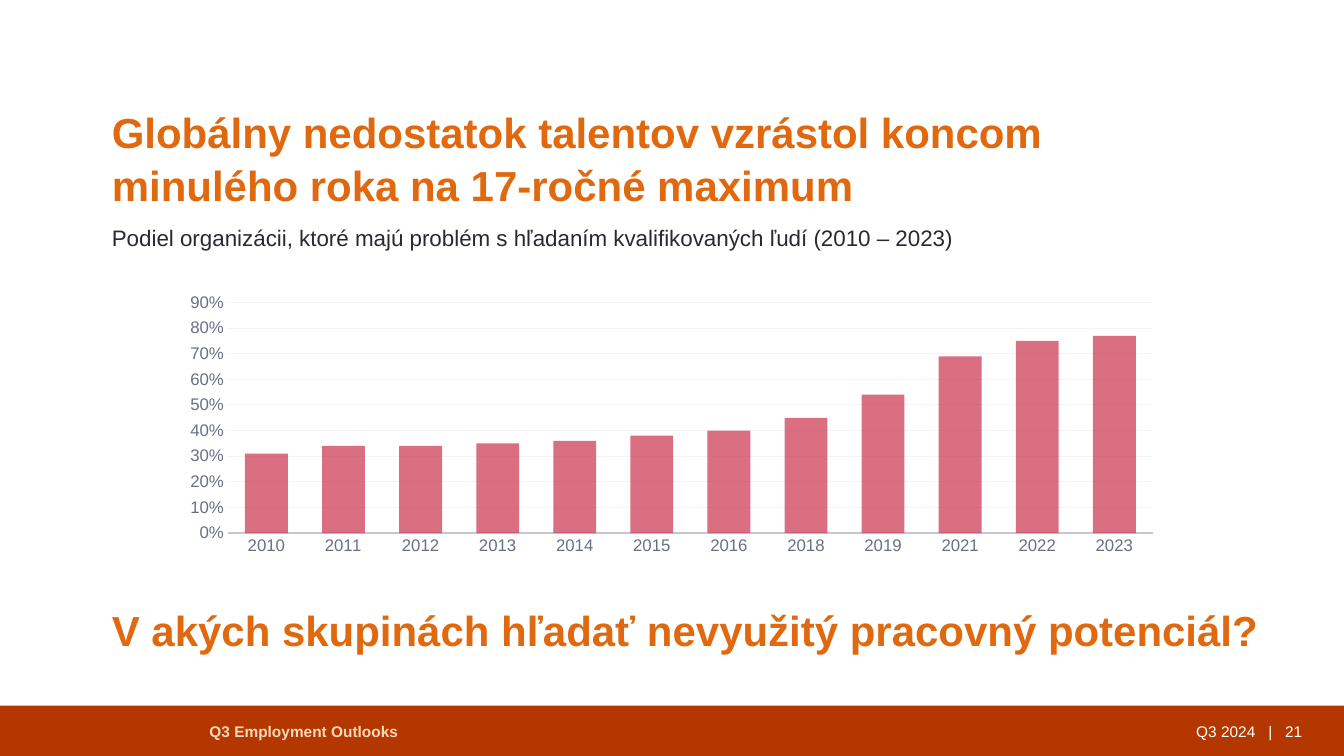
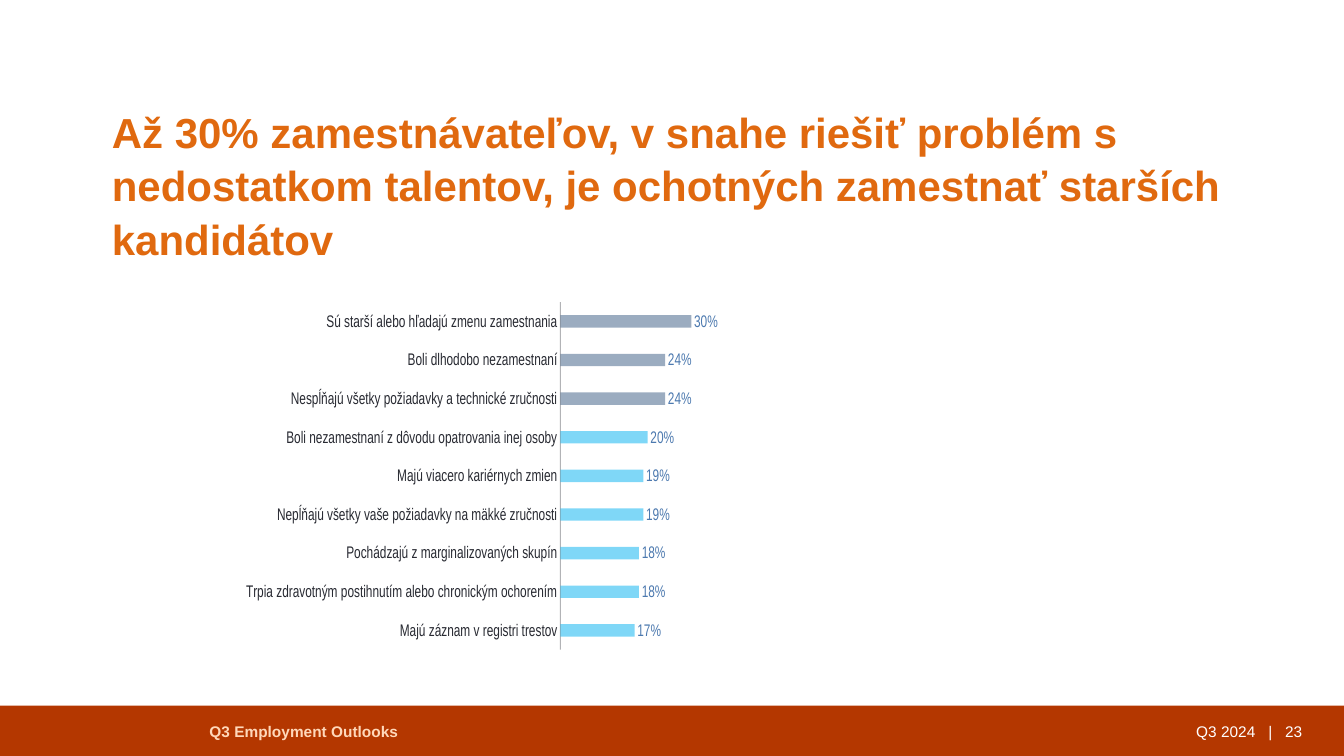
from pptx import Presentation
from pptx.chart.data import CategoryChartData as Data
from pptx.dml.color import RGBColor as RGB
from pptx.enum.chart import XL_CHART_TYPE as Kind
from pptx.enum.chart import XL_LABEL_POSITION as Spot
from pptx.enum.chart import XL_TICK_MARK as Tick
from pptx.enum.shapes import MSO_SHAPE as Form
from pptx.enum.text import MSO_ANCHOR as Anchor
from pptx.enum.text import PP_ALIGN as Align
from pptx.oxml import parse_xml
from pptx.oxml.ns import nsdecls, qn
from pptx.util import Cm, Pt

FACE = "Arial"
ORANGE, RUST, PEACH, WHITE = "E0690F", "B43700", "FFD8BA", "FFFFFF"
INK, GREY, PALE, RULE, STONE = "282A32", "696F84", "F3F4F6", "C5C7D0", "67696F"
ROSE, SKY, NAVY, BLUE = "CC334D", "00B0F0", "395B83", "4C79AF"
LEFT, WIDE = 2.82, 28.19
HEAD = dict(size=30, color=ORANGE, bold=True, lead=38)


def paint(fill, color, alpha=None):
    fill.solid()
    fill.fore_color.rgb = RGB.from_string(color)
    if alpha:
        tone = fill._xPr.find(qn("a:solidFill")).find(qn("a:srgbClr"))
        tone.append(parse_xml(f'<a:alpha {nsdecls("a")} val="{alpha * 1000}"/>'))


def text(slide, words, box, size=11, color=INK, bold=False, lead=None,
         align=Align.LEFT, anchor=Anchor.TOP, gap=0):
    """Words is a list of runs; a run of one space is widened by gap points."""
    frame = slide.shapes.add_textbox(*map(Cm, box)).text_frame
    frame.word_wrap = True
    frame.vertical_anchor = anchor
    frame.margin_left = frame.margin_right = 0
    frame.margin_top = frame.margin_bottom = 0
    para = frame.paragraphs[0]
    para.alignment = align
    if lead:
        para.line_spacing = Pt(lead)
    for part in words:
        run = para.add_run()
        run.text = part
        run.font.name, run.font.size, run.font.bold = FACE, Pt(size), bold
        paint(run.font.fill, color)
        if part == " ":
            run.font._element.set("spc", str(round(gap * 100)))


pages = [
    dict(
        num="21",
        title="Globálny nedostatok talentov vzrástol koncom "
              "minulého roka na 17-ročné maximum",
        kind=Kind.COLUMN_CLUSTERED, box=(4.29, 7.26, 25.27, 6.86),
        bar=(ROSE, 70), space=80, label=GREY, axis=(RULE, None, 1.25),
        rows=[("2010", 0.31), ("2011", 0.34), ("2012", 0.34), ("2013", 0.35),
              ("2014", 0.36), ("2015", 0.38), ("2016", 0.4), ("2018", 0.45),
              ("2019", 0.54), ("2021", 0.69), ("2022", 0.75), ("2023", 0.77)]),
    dict(
        num="23",
        title="Až 30% zamestnávateľov, v snahe riešiť problém s nedostatkom "
              "talentov, je ochotných zamestnať starších kandidátov",
        kind=Kind.BAR_CLUSTERED, box=(6.2, 5.64, 27.05, 12.34),
        bar=(SKY, 50), space=214, label=INK, axis=(STONE, 50, 1),
        rows=[("Sú starší alebo hľadajú zmenu zamestnania", 0.3),
              ("Boli dlhodobo nezamestnaní", 0.24),
              ("Nespĺňajú všetky požiadavky a technické zručnosti", 0.24),
              ("Boli nezamestnaní z dôvodu opatrovania inej osoby", 0.2),
              ("Majú viacero kariérnych zmien", 0.19),
              ("Nepĺňajú všetky vaše požiadavky na mäkké zručnosti", 0.19),
              ("Pochádzajú z marginalizovaných skupín", 0.18),
              ("Trpia zdravotným postihnutím alebo chronickým ochorením", 0.18),
              ("Majú záznam v registri trestov", 0.17)]),
]

deck = Presentation()
deck.slide_width, deck.slide_height = Cm(33.87), Cm(19.05)
slides, charts = [], []

for page in pages:
    slide = deck.slides.add_slide(deck.slide_layouts[6])
    slides.append(slide)

    # Footer band
    band = slide.shapes.add_shape(Form.RECTANGLE, 0, Cm(17.78),
                                  deck.slide_width, Cm(1.27))
    band.shadow.inherit = False
    paint(band.fill, RUST)
    band.line.fill.background()
    text(slide, ["Q3 Employment Outlooks"], (5.28, 18.19, 10.16, 0.48),
         color=PEACH, bold=True, anchor=Anchor.MIDDLE)
    text(slide, ["Q3 2024", " ", "|", " ", page["num"]],
         (27.38, 18.19, 5.44, 0.48), color=WHITE, align=Align.RIGHT,
         anchor=Anchor.MIDDLE, gap=6.1)

    # Title
    text(slide, [page["title"]], (LEFT, 2.62, WIDE, 1.27), **HEAD)

    # Chart with its shared style
    data = Data(number_format="0%")
    data.categories = [name for name, _ in page["rows"]]
    data.add_series("Series 1", [value for _, value in page["rows"]])
    chart = slide.shapes.add_chart(page["kind"], *map(Cm, page["box"]),
                                   data).chart
    charts.append(chart)
    chart.has_legend = chart.has_title = False
    chart.font.name, chart.font.size = FACE, Pt(10)
    paint(chart.font.fill, INK)
    plot = chart.plots[0]
    plot.gap_width, plot.vary_by_categories = page["space"], False
    bars = plot.series[0]
    bars.invert_if_negative = False
    paint(bars.format.fill, *page["bar"])
    for axis in (chart.category_axis, chart.value_axis):
        axis.major_tick_mark = axis.minor_tick_mark = Tick.NONE
        axis.has_major_gridlines = False
        font = axis.tick_labels.font
        font.name, font.size = FACE, Pt(12)
        paint(font.fill, page["label"])
    chart.value_axis.minimum_scale = 0
    color, alpha, width = page["axis"]
    line = chart.category_axis.format.line
    line.width = Pt(width)
    paint(line.fill, color, alpha)

# Columns: value axis and gridlines
years, groups = charts
years.plots[0].overlap = 25
axis = years.value_axis
axis.maximum_scale, axis.major_unit = 0.9, 0.1
axis.tick_labels.number_format = "0%"
axis.tick_labels.number_format_is_linked = False
axis.format.line.fill.background()
axis.has_major_gridlines = True
grid = axis.major_gridlines.format.line
grid.width = Pt(0.75)
paint(grid.fill, PALE)

# Texts around the columns
text(slides[0], ["Podiel organizácii, ktoré majú problém s hľadaním "
                 "kvalifikovaných ľudí (2010 – 2023)"],
     (LEFT, 5.54, WIDE, 1.73), size=16, lead=22)
text(slides[0], ["V akých skupinách hľadať nevyužitý pracovný potenciál?"],
     (LEFT, 15.16, 28.96, 1.27), **HEAD)

# Bars: order, leading three and value labels
groups.category_axis.reverse_order = True
groups.value_axis.maximum_scale = 0.8
groups.value_axis.visible = False
plot = groups.plots[0]
for spot in range(3):
    paint(plot.series[0].points[spot].format.fill, NAVY, 50)
tags = plot.series[0].data_labels
tags.show_value = True
tags.position = Spot.OUTSIDE_END
tags.number_format, tags.number_format_is_linked = "0%", False
tags.font.name, tags.font.size = FACE, Pt(12)
paint(tags.font.fill, BLUE)

# Bars: fixed plot area
area = groups._chartSpace.chart.plotArea
for old in area.findall(qn("c:layout")):
    area.remove(old)
sizes = zip("xywh", (0, 0.16, 0.46, 0.71))
area.insert(0, parse_xml(
    f'<c:layout {nsdecls("c")}><c:manualLayout>'
    '<c:layoutTarget val="inner"/><c:xMode val="edge"/><c:yMode val="edge"/>'
    + "".join(f'<c:{side} val="{part}"/>' for side, part in sizes)
    + "</c:manualLayout></c:layout>"))

deck.save("out.pptx")
